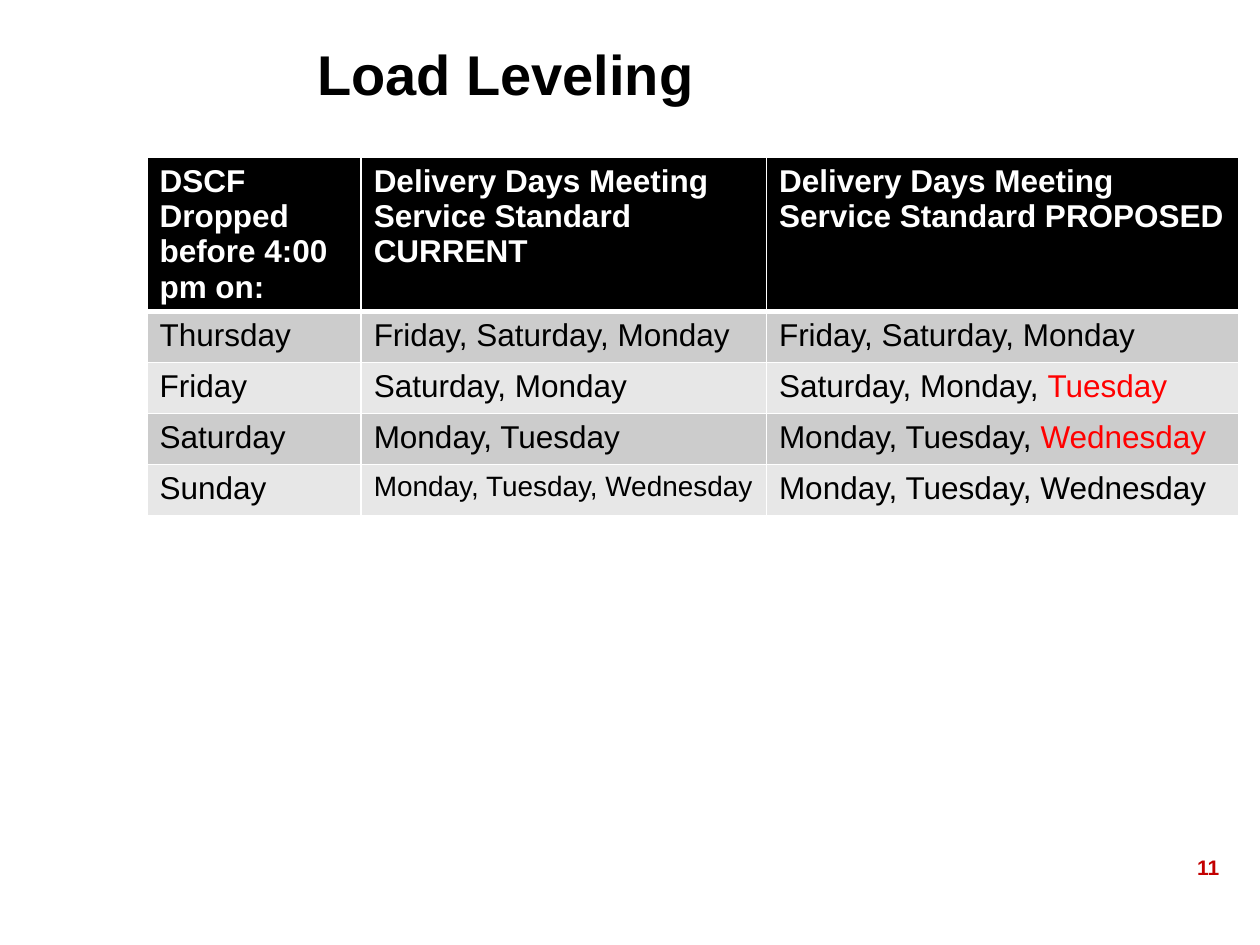
from lxml import etree
from pptx import Presentation
from pptx.dml.color import RGBColor
from pptx.enum.text import MSO_ANCHOR, PP_ALIGN
from pptx.oxml.ns import qn
from pptx.util import Pt

LEFT = PP_ALIGN.LEFT
CENTER = PP_ALIGN.CENTER
MIDDLE = MSO_ANCHOR.MIDDLE
BOTTOM = MSO_ANCHOR.BOTTOM

FONT = "Arial"
COLORS = {
    "black": "000000",
    "white": "FFFFFF",
    "dark_band": "CCCCCC",
    "light_band": "E7E7E7",
    "added_day": "FF0000",
    "page_number": "C30000",
}
TITLE_ONLY_LAYOUT = 5
COLUMN_WIDTHS = [122.4, 231.6, 270]
ROW_HEIGHT = 29.2
HEADERS = [
    "DSCF Dropped before 4:00 pm on:",
    "Delivery Days Meeting Service Standard CURRENT",
    "Delivery Days Meeting Service Standard PROPOSED",
]
SCHEDULE = [
    ("Thursday", "Friday, Saturday, Monday", "Friday, Saturday, Monday", ""),
    ("Friday", "Saturday, Monday", "Saturday, Monday, ", "Tuesday"),
    ("Saturday", "Monday, Tuesday", "Monday, Tuesday, ", "Wednesday"),
    ("Sunday", "Monday, Tuesday, Wednesday", "Monday, Tuesday, Wednesday", ""),
]


def format_run(run, size, color, bold=False):
    run.font.name = FONT
    run.font.size = Pt(size)
    run.font.bold = bold
    run.font.color.rgb = RGBColor.from_string(COLORS[color])


def set_text(text_frame, text, size, color, bold=False):
    text_frame.text = text
    paragraph = text_frame.paragraphs[0]
    format_run(paragraph.runs[0], size, color, bold)
    return paragraph


def add_title(slide, text):
    title = slide.shapes.title
    title.left, title.top, title.width, title.height = Pt(174), Pt(12), Pt(534), Pt(60)
    title.text_frame.vertical_anchor = MIDDLE
    paragraph = set_text(title.text_frame, text, 32, "black", True)
    paragraph.alignment = LEFT


def set_borders(cell, top, bottom):
    properties = cell._tc.get_or_add_tcPr()
    for tag, width in (("a:lnL", 1), ("a:lnR", 1), ("a:lnT", top), ("a:lnB", bottom)):
        line = etree.SubElement(properties, qn(tag), w=str(Pt(width)))
        fill = etree.SubElement(line, qn("a:solidFill"))
        etree.SubElement(fill, qn("a:srgbClr"), val=COLORS["white"])


def style_cell(cell, fill, top=1, bottom=1):
    set_borders(cell, top, bottom)
    cell.fill.solid()
    cell.fill.fore_color.rgb = RGBColor.from_string(COLORS[fill])


def add_schedule_table(slide):
    row_count = len(SCHEDULE) + 1
    frame = slide.shapes.add_table(
        row_count, len(HEADERS), Pt(84), Pt(90),
        Pt(sum(COLUMN_WIDTHS)), Pt(row_count * ROW_HEIGHT))
    table = frame.table
    for column, width in zip(table.columns, COLUMN_WIDTHS):
        column.width = Pt(width)
    for row in table.rows:
        row.height = Pt(ROW_HEIGHT)

    for column, header in enumerate(HEADERS):
        cell = table.cell(0, column)
        style_cell(cell, "black", bottom=3)
        set_text(cell.text_frame, header, 18, "white", True)

    for row, (*texts, added_day) in enumerate(SCHEDULE, start=1):
        band = "dark_band" if row % 2 else "light_band"
        for column, text in enumerate(texts):
            cell = table.cell(row, column)
            style_cell(cell, band, top=3 if row == 1 else 1)
            size = 16 if (row, column) == (4, 1) else 18
            paragraph = set_text(cell.text_frame, text, size, "black")
        if added_day:
            run = paragraph.add_run()
            run.text = added_day
            format_run(run, 18, "added_day")


def add_page_number(slide, number):
    box = slide.shapes.add_textbox(Pt(672.5), Pt(482.4), Pt(36), Pt(24))
    box.text_frame.word_wrap = True
    box.text_frame.vertical_anchor = BOTTOM
    paragraph = set_text(box.text_frame, number, 12, "page_number", True)
    paragraph.alignment = CENTER


def main():
    presentation = Presentation()
    presentation.slide_width = Pt(720)
    presentation.slide_height = Pt(540)
    slide = presentation.slides.add_slide(presentation.slide_layouts[TITLE_ONLY_LAYOUT])
    add_title(slide, "Load Leveling")
    add_schedule_table(slide)
    add_page_number(slide, "11")
    presentation.save("out.pptx")


if __name__ == "__main__":
    main()
